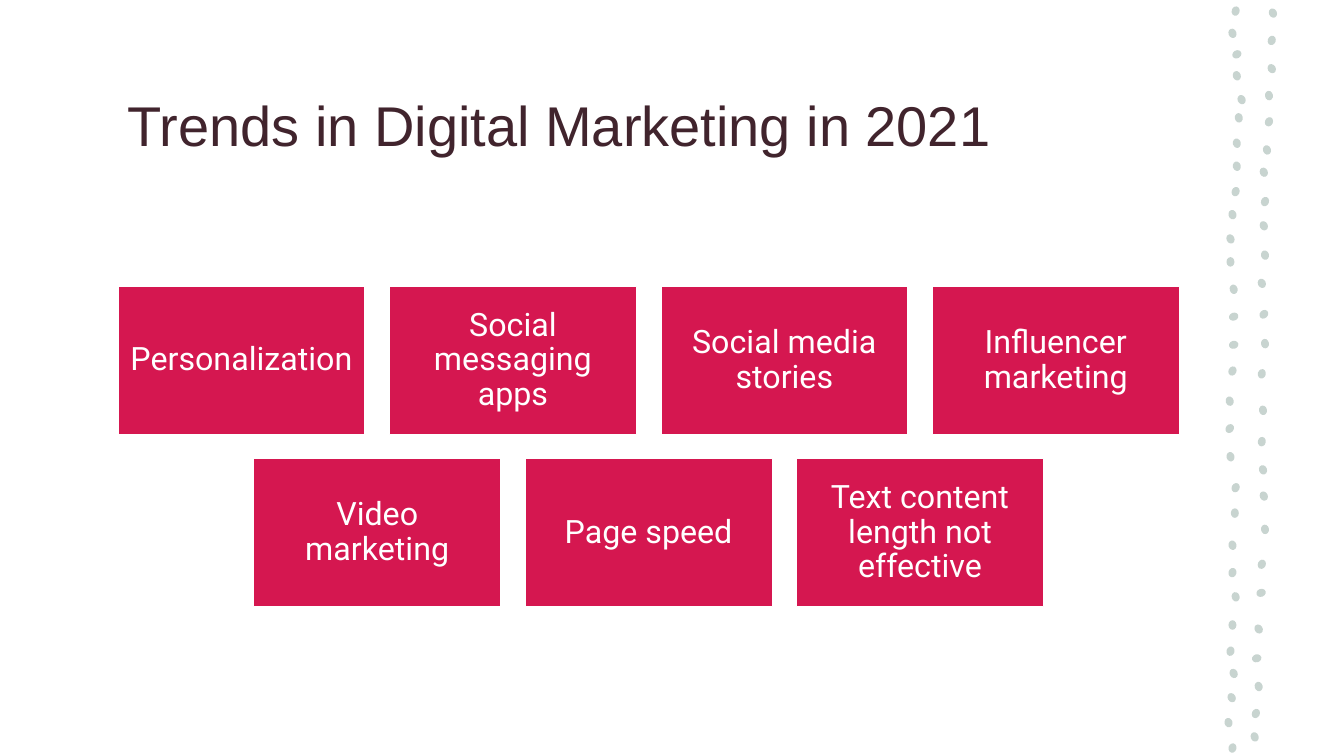
from pptx import Presentation
from pptx.dml.color import RGBColor
from pptx.enum.shapes import MSO_SHAPE
from pptx.enum.text import MSO_ANCHOR, PP_ALIGN
from pptx.util import Cm, Pt


def paint(fill, color):
    fill.solid()
    fill.fore_color.rgb = RGBColor.from_string(color)


def write_text(shape, text, font="Roboto", size=23, color="FFFFFF",
               align=PP_ALIGN.CENTER, inset=0.25, spacing=0.9):
    frame = shape.text_frame
    frame.word_wrap = True
    frame.vertical_anchor = MSO_ANCHOR.MIDDLE
    frame.margin_left = frame.margin_right = Cm(inset)
    frame.margin_top = frame.margin_bottom = Cm(inset)
    paragraph = frame.paragraphs[0]
    paragraph.alignment = align
    paragraph.line_spacing = spacing
    run = paragraph.add_run()
    run.text = text
    run.font.name = font
    run.font.size = Pt(size)
    paint(run.font.fill, color)


presentation = Presentation()
presentation.slide_width = Cm(33.87)
presentation.slide_height = Cm(19.05)
slide = presentation.slides.add_slide(presentation.slide_layouts[5])
paint(slide.background.fill, "FFFFFF")

# Two wavering columns of dots: centre x, centre y, tilt in degrees
dots = [
    (31.14, 0.28, 15), (31.06, 0.84, -20), (31.17, 1.37, 60), (31.17, 1.91, -20),
    (31.29, 2.51, -25), (31.22, 2.97, -10), (31.17, 3.61, -15), (31.17, 4.19, -15),
    (31.14, 4.83, 20), (31.06, 5.41, -15), (31.01, 6.02, -25), (31.01, 6.6, 0),
    (31.09, 7.29, -15), (31.09, 7.98, 70), (31.09, 8.69, 75), (31.06, 9.35, 25),
    (30.99, 10.11, -15), (30.99, 10.8, 40), (31.01, 11.51, -15), (31.14, 12.29, 25),
    (31.12, 12.93, 0), (31.06, 13.74, -15), (31.06, 14.43, 15), (31.14, 15.04, -15),
    (31.06, 15.75, 0), (31.01, 16.41, 15), (31.09, 16.97, -25), (31.04, 17.58, -30),
    (30.96, 18.21, -15), (31.06, 18.85, 15),
    (32.08, 0.33, -25), (32.05, 1.02, 20), (32.05, 1.73, -30), (31.98, 2.41, -10),
    (31.98, 3.07, 25), (31.93, 3.78, -20), (31.85, 4.34, -25), (31.88, 5.08, 20),
    (31.85, 5.69, -25), (31.88, 6.43, -15), (31.8, 7.14, -25), (31.85, 7.92, 45),
    (31.88, 8.66, -10), (31.8, 9.42, 15), (31.83, 10.34, -10), (31.8, 11.13, 10),
    (31.83, 11.84, -20), (31.85, 12.5, -25), (31.88, 13.34, -10), (31.8, 14.22, 25),
    (31.78, 14.94, 70), (31.72, 15.85, -35), (31.67, 16.59, 75), (31.72, 17.3, -15),
    (31.65, 17.98, 25), (31.62, 18.57, -20),
]
dot_width, dot_height = 0.2, 0.24
for x, y, tilt in dots:
    dot = slide.shapes.add_shape(
        MSO_SHAPE.OVAL, Cm(x - dot_width / 2), Cm(y - dot_height / 2),
        Cm(dot_width), Cm(dot_height))
    dot.rotation = tilt
    dot.shadow.inherit = False
    paint(dot.fill, "C8D4D0")
    dot.line.fill.background()

title = slide.shapes.title
title.left, title.top, title.width, title.height = Cm(2.97), Cm(1.4), Cm(26.77), Cm(3.68)
write_text(title, "Trends in Digital Marketing in 2021", font="Arial", size=40,
           color="41242D", align=PP_ALIGN.LEFT)

trend_rows = [
    ["Personalization", "Social messaging apps", "Social media stories",
     "Influencer marketing"],
    ["Video marketing", "Page speed", "Text content length not effective"],
]
card_width, card_height, gap = 6.23, 3.73, 0.61
cards_center, cards_top = 16.35, 7.22
for row, trends in enumerate(trend_rows):
    row_width = len(trends) * (card_width + gap) - gap
    for column, trend in enumerate(trends):
        card = slide.shapes.add_shape(
            MSO_SHAPE.RECTANGLE,
            Cm(cards_center - row_width / 2 + column * (card_width + gap)),
            Cm(cards_top + row * (card_height + gap)),
            Cm(card_width), Cm(card_height))
        card.shadow.inherit = False
        paint(card.fill, "D51750")
        paint(card.line.fill, "FFFFFF")
        card.line.width = Pt(1)
        write_text(card, trend)

presentation.save("out.pptx")
